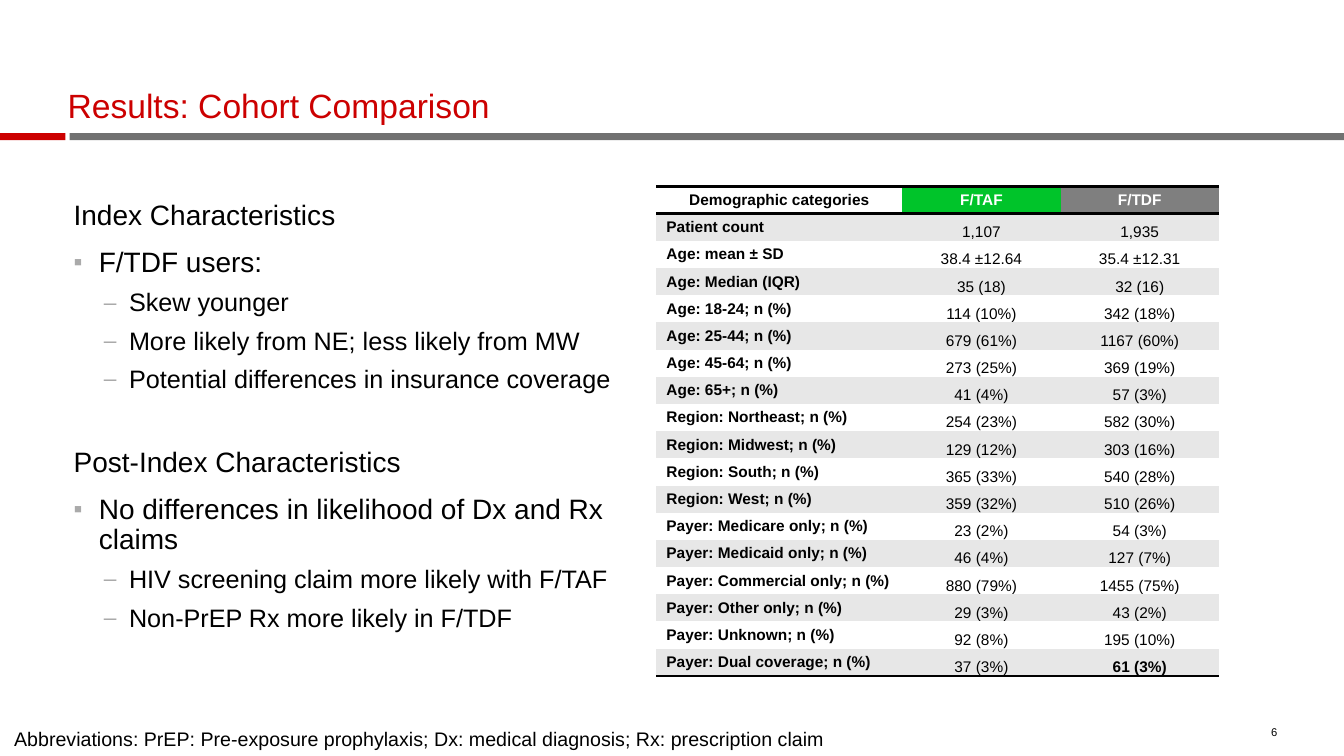
from dataclasses import dataclass
from lxml import etree
from pptx import Presentation
from pptx.dml.color import RGBColor
from pptx.enum.shapes import MSO_SHAPE
from pptx.enum.text import MSO_ANCHOR, MSO_AUTO_SIZE, PP_ALIGN
from pptx.oxml.ns import qn
from pptx.util import Inches, Pt

RECT = MSO_SHAPE.RECTANGLE
TOP, MIDDLE, BOTTOM = MSO_ANCHOR.TOP, MSO_ANCHOR.MIDDLE, MSO_ANCHOR.BOTTOM
NO_FIT = MSO_AUTO_SIZE.NONE
LEFT, CENTER, RIGHT = PP_ALIGN.LEFT, PP_ALIGN.CENTER, PP_ALIGN.RIGHT
FONT = "Arial"
PLAIN_TABLE = "{2D5ABB26-0587-4C30-8999-92F81FD0307C}"
COLORS = {
    "red": "CC0000", "rule": "717171", "black": "000000", "white": "FFFFFF",
    "green": "00C42A", "gray": "7F7F7F", "band": "E7E7E7", "bullet": "AAAAAA",
}


@dataclass
class Bar:
    left: float
    width: float
    color: str


@dataclass
class ListStyle:
    size: int
    before: float
    level: int = 0
    indent: float = 0
    bullet: str = ""


@dataclass
class Item:
    text: str
    style: ListStyle


HEADING = ListStyle(20, 12)
NEXT_HEADING = ListStyle(20, 38.6)
POINT = ListStyle(20, 12, 0, 0.25, "▪")
DETAIL = ListStyle(18, 8, 1, 0.55, "–")

BARS = [Bar(0.69, 12.65, "rule"), Bar(0, 0.65, "red")]
ITEMS = [
    Item("Index Characteristics", HEADING),
    Item("F/TDF users:", POINT),
    Item("Skew younger", DETAIL),
    Item("More likely from NE; less likely from MW", DETAIL),
    Item("Potential differences in insurance coverage", DETAIL),
    Item("Post-Index Characteristics", NEXT_HEADING),
    Item("No differences in likelihood of Dx and Rx claims", POINT),
    Item("HIV screening claim more likely with F/TAF", DETAIL),
    Item("Non-PrEP Rx more likely in F/TDF", DETAIL),
]
COLUMN_WIDTHS = [2.44, 1.57, 1.57]
ROW_HEIGHT = 0.27
HEADER_FILLS = ["white", "green", "gray"]
ROWS = [
    ("Demographic categories", "F/TAF", "F/TDF"),
    ("Patient count", "1,107", "1,935"),
    ("Age: mean ± SD", "38.4 ±12.64", "35.4 ±12.31"),
    ("Age: Median (IQR)", "35 (18)", "32 (16)"),
    ("Age: 18-24; n (%)", "114 (10%)", "342 (18%)"),
    ("Age: 25-44; n (%)", "679 (61%)", "1167 (60%)"),
    ("Age: 45-64; n (%)", "273 (25%)", "369 (19%)"),
    ("Age: 65+; n (%)", "41 (4%)", "57 (3%)"),
    ("Region: Northeast; n (%)", "254 (23%)", "582 (30%)"),
    ("Region: Midwest; n (%)", "129 (12%)", "303 (16%)"),
    ("Region: South; n (%)", "365 (33%)", "540 (28%)"),
    ("Region: West; n (%)", "359 (32%)", "510 (26%)"),
    ("Payer: Medicare only; n (%)", "23 (2%)", "54 (3%)"),
    ("Payer: Medicaid only; n (%)", "46 (4%)", "127 (7%)"),
    ("Payer: Commercial only; n (%)", "880 (79%)", "1455 (75%)"),
    ("Payer: Other only; n (%)", "29 (3%)", "43 (2%)"),
    ("Payer: Unknown; n (%)", "92 (8%)", "195 (10%)"),
    ("Payer: Dual coverage; n (%)", "37 (3%)", "61 (3%)"),
]


def rgb(name: str) -> RGBColor:
    return RGBColor.from_string(COLORS[name])


def write(p, text: str, *, size: float, color: str = "black", bold: bool = False,
          align=LEFT, spacing: float = 1, before: float = 0) -> None:
    p.alignment, p.line_spacing, p.space_before = align, spacing, Pt(before)
    r = p.add_run()
    r.text = text
    r.font.name, r.font.size, r.font.bold = FONT, Pt(size), bold
    r.font.color.rgb = rgb(color)


def place(sp, left: float, top: float, width: float, height: float, anchor=TOP):
    sp.left, sp.top = Inches(left), Inches(top)
    sp.width, sp.height = Inches(width), Inches(height)
    tf = sp.text_frame
    tf.word_wrap, tf.auto_size, tf.vertical_anchor = True, NO_FIT, anchor
    tf.margin_left = tf.margin_right = tf.margin_top = tf.margin_bottom = 0
    return tf


def add_text_box(s, left: float, top: float, width: float, height: float, anchor=TOP):
    sp = s.shapes.add_textbox(0, 0, 0, 0)
    return place(sp, left, top, width, height, anchor).paragraphs[0]


def add_bar(s, bar: Bar) -> None:
    sp = s.shapes.add_shape(RECT, Inches(bar.left), Inches(1.32), Inches(bar.width), Inches(0.07))
    sp.shadow.inherit = False
    sp.fill.solid()
    sp.fill.fore_color.rgb = rgb(bar.color)
    sp.line.fill.background()


def set_bullet(p, style: ListStyle) -> None:
    pPr = p._p.get_or_add_pPr()
    hanging = Inches(0.25) if style.bullet else 0
    pPr.set("marL", str(Inches(style.indent)))
    pPr.set("indent", str(-hanging))
    if not style.bullet:
        etree.SubElement(pPr, qn("a:buNone"))
        return
    color = etree.SubElement(pPr, qn("a:buClr"))
    etree.SubElement(color, qn("a:srgbClr"), val=COLORS["bullet"])
    etree.SubElement(pPr, qn("a:buSzPct"), val="90000")
    etree.SubElement(pPr, qn("a:buFont"), typeface=FONT)
    etree.SubElement(pPr, qn("a:buChar"), char=style.bullet)


def fill_list(tf, items: list[Item]) -> None:
    for i, item in enumerate(items):
        p = tf.add_paragraph() if i else tf.paragraphs[0]
        p.level = item.style.level
        write(p, item.text, size=item.style.size, spacing=0.9, before=item.style.before)
        set_bullet(p, item.style)


def add_border(cell, side: str) -> None:
    ln = etree.SubElement(cell._tc.get_or_add_tcPr(), qn(f"a:{side}"), w=str(Pt(2)))
    fill = etree.SubElement(ln, qn("a:solidFill"))
    etree.SubElement(fill, qn("a:srgbClr"), val=COLORS["black"])


def format_cell(cell, row: int, col: int) -> None:
    header, last = row == 0, row == len(ROWS) - 1
    if header:
        add_border(cell, "lnT")
    if header or last:
        add_border(cell, "lnB")
    cell.fill.solid()
    cell.fill.fore_color.rgb = rgb(HEADER_FILLS[col] if header else "band" if row % 2 else "white")
    cell.margin_top = cell.margin_bottom = Inches(0.04)
    cell.vertical_anchor = MIDDLE
    if not header and col:
        cell.vertical_anchor = BOTTOM
        cell.margin_left = cell.margin_right = cell.margin_top = Inches(0.01)
        cell.margin_bottom = 0
    write(cell.text_frame.paragraphs[0], ROWS[row][col], size=11,
          color="white" if header and col else "black",
          bold=header or col == 0 or (last and col == 2),
          align=CENTER if header or col else LEFT)


def add_cohort_table(s) -> None:
    frame = s.shapes.add_table(len(ROWS), len(COLUMN_WIDTHS), Inches(6.51), Inches(1.85),
                               Inches(sum(COLUMN_WIDTHS)), Inches(ROW_HEIGHT * len(ROWS)))
    table = frame.table
    table._tbl.tblPr.find(qn("a:tableStyleId")).text = PLAIN_TABLE
    for column, width in zip(table.columns, COLUMN_WIDTHS):
        column.width = Inches(width)
    for i, row in enumerate(table.rows):
        row.height = Inches(ROW_HEIGHT)
        for j, cell in enumerate(row.cells):
            format_cell(cell, i, j)


def main() -> None:
    prs = Presentation()
    prs.slide_width, prs.slide_height = Inches(13.33), Inches(7.5)
    s = prs.slides.add_slide(prs.slide_layouts[1])
    for bar in BARS:
        add_bar(s, bar)
    title = place(s.shapes.title, 0.67, 0.51, 12, 0.74, BOTTOM)
    write(title.paragraphs[0], "Results: Cohort Comparison", size=24, color="red", spacing=0.9)
    add_cohort_table(s)
    fill_list(place(s.placeholders[1], 0.73, 2, 5.58, 4.76), ITEMS)
    write(add_text_box(s, 12.31, 7.15, 0.36, 0.18, BOTTOM), "6", size=8, align=RIGHT)
    write(add_text_box(s, 0.14, 7.24, 12.16, 0.21),
          "Abbreviations: PrEP: Pre-exposure prophylaxis; Dx: medical diagnosis; Rx: prescription claim",
          size=14, spacing=0.9)
    prs.save("out.pptx")


if __name__ == "__main__":
    main()
